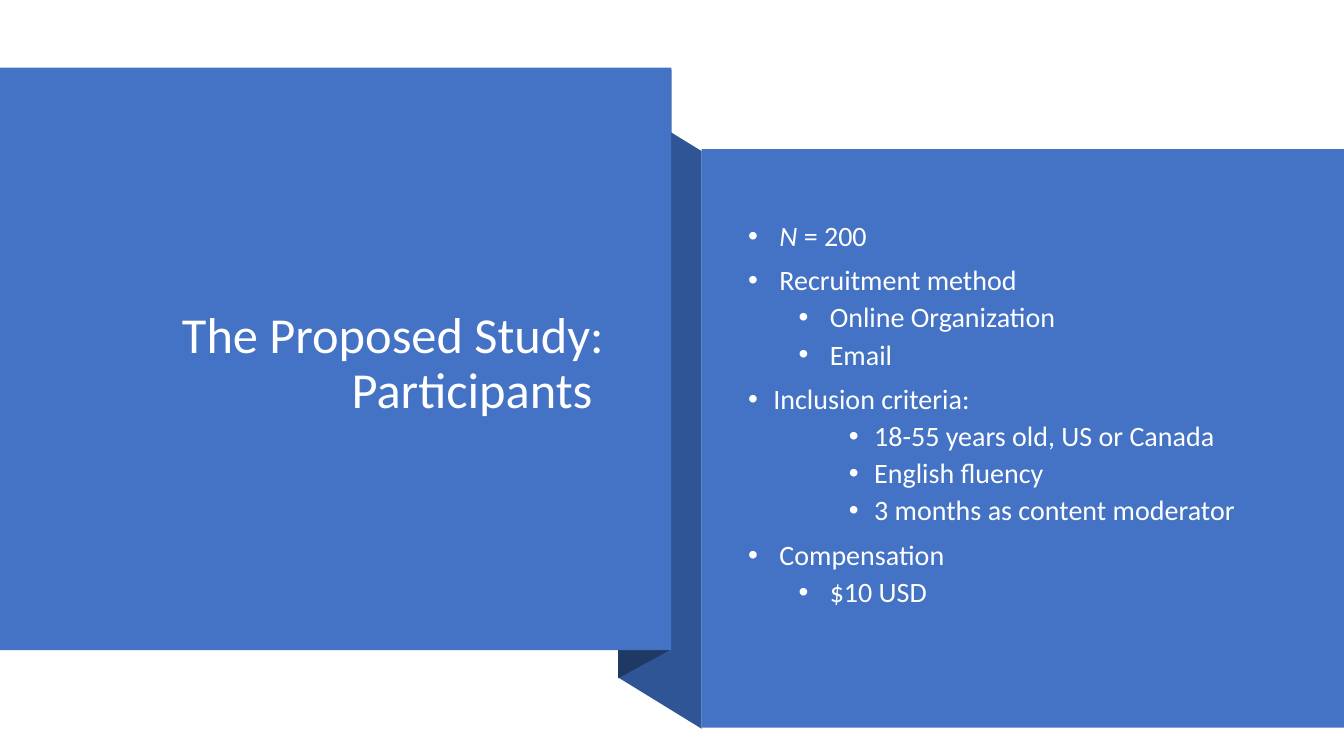
from lxml.etree import SubElement
from pptx import Presentation
from pptx.dml.color import RGBColor
from pptx.enum.shapes import MSO_SHAPE
from pptx.enum.text import MSO_ANCHOR, MSO_AUTO_SIZE, PP_ALIGN
from pptx.oxml.ns import qn
from pptx.util import Inches, Pt

COLORS = {"panel": "4472C4", "fold": "2F5597", "fold_shadow": "203864",
          "title": "FFFFFF", "body": "FEFFFF"}

presentation = Presentation()
presentation.slide_width = Inches(13.33)
presentation.slide_height = Inches(7.5)
slide = presentation.slides.add_slide(presentation.slide_layouts[1])

# Ribbon edges shared by the panels and folds
FOLD_LEFT, LEFT_PANEL_RIGHT, RIGHT_PANEL_LEFT = 6.13, 6.66, 6.96
LEFT_TOP, LEFT_BOTTOM = 0.67, 6.45
RIGHT_TOP, RIGHT_BOTTOM = 1.48, 7.22


def paint(shape, color):
    shape.fill.solid()
    shape.fill.fore_color.rgb = RGBColor.from_string(COLORS[color])
    shape.line.fill.background()
    shape.shadow.inherit = False


# Folds behind the panels
folds = [
    ("fold", [(RIGHT_PANEL_LEFT, 7.23), (FOLD_LEFT, 6.72),
              (FOLD_LEFT, 0.99), (RIGHT_PANEL_LEFT, 1.5)]),
    ("fold_shadow", [(LEFT_PANEL_RIGHT, 6.44), (FOLD_LEFT, 6.73),
                     (FOLD_LEFT, 0.98), (LEFT_PANEL_RIGHT, 0.69)]),
]
panels = [
    (0, LEFT_TOP, LEFT_PANEL_RIGHT, LEFT_BOTTOM),
    (RIGHT_PANEL_LEFT, RIGHT_TOP, 13.33, RIGHT_BOTTOM),
]
for (color, corners), (left, top, right, bottom) in zip(reversed(folds), panels):
    pass_points = [(Inches(x), Inches(y)) for x, y in corners]
for color, corners in folds:
    points = [(Inches(x), Inches(y)) for x, y in corners]
    builder = slide.shapes.build_freeform(*points[0])
    builder.add_line_segments(points[1:], close=True)
    paint(builder.convert_to_shape(), color)

# Left and right panels
for left, top, right, bottom in panels:
    panel = slide.shapes.add_shape(
        MSO_SHAPE.RECTANGLE, Inches(left), Inches(top),
        Inches(right - left), Inches(bottom - top))
    paint(panel, "panel")

# Placeholders, brought in front of the panels
title, body = slide.shapes.title, slide.placeholders[1]
for placeholder, left, top, height in [(title, 0.95, 1.32, 4.6),
                                       (body, 7.32, 1.85, 4.77)]:
    placeholder.left, placeholder.top = Inches(left), Inches(top)
    placeholder.width, placeholder.height = Inches(5.14), Inches(height)
    placeholder.text_frame.word_wrap = True
    placeholder.text_frame.auto_size = MSO_AUTO_SIZE.NONE
    placeholder.text_frame.vertical_anchor = MSO_ANCHOR.MIDDLE
    slide.shapes.element.append(placeholder.element)


def set_font(paragraph, size, color):
    paragraph.line_spacing = 0.9
    paragraph.font.name = "Calibri"
    paragraph.font.size = Pt(size)
    paragraph.font.color.rgb = RGBColor.from_string(COLORS[color])


# Title
title.text_frame.text = "The Proposed Study: Participants "
heading = title.text_frame.paragraphs[0]
heading.alignment = PP_ALIGN.RIGHT
set_font(heading, 36, "title")

# Bullet list: level, hanging indent, text
bullets = [
    (0, 0.31, "N = 200"),
    (0, 0.31, "Recruitment method"),
    (1, 0.31, "Online Organization"),
    (1, 0.31, "Email"),
    (0, 0.25, "Inclusion criteria:"),
    (2, 0.25, "18-55 years old, US or Canada"),
    (2, 0.25, "English fluency"),
    (2, 0.25, "3 months as content moderator"),
    (0, 0.31, "Compensation"),
    (1, 0.31, "$10 USD"),
]
frame = body.text_frame
frame.margin_top, frame.margin_bottom = Inches(0.19), Inches(0.42)
for index, (level, hanging, text) in enumerate(bullets):
    paragraph = frame.add_paragraph() if index else frame.paragraphs[0]
    properties = paragraph._p.get_or_add_pPr()
    properties.set("marL", str(Inches(level * 0.5 + hanging)))
    properties.set("indent", str(-Inches(hanging)))
    SubElement(properties, qn("a:buChar")).set("char", "•")
    paragraph.level = level
    paragraph.space_before = Pt(0 if index == 0 else 5 if level else 10)
    set_font(paragraph, 20, "body")
    if index == 0:
        symbol, rest = text[:1], text[1:]
        italic_run = paragraph.add_run()
        italic_run.text = symbol
        italic_run.font.italic = True
        paragraph.add_run().text = rest
    else:
        paragraph.add_run().text = text

presentation.save("out.pptx")
